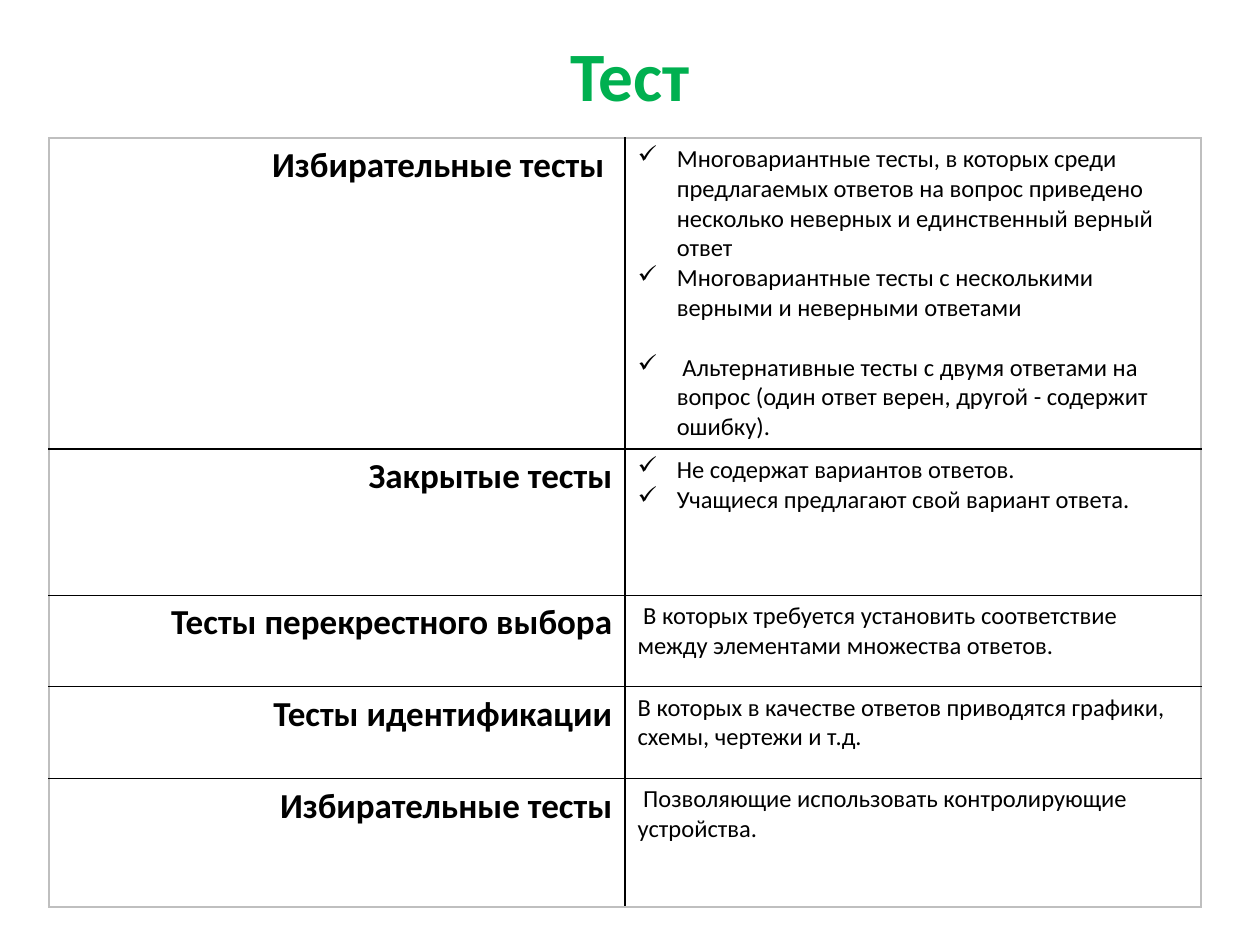
from lxml import etree
from pptx import Presentation
from pptx import util as u
from pptx.dml.color import RGBColor
from pptx.enum import text
from pptx.oxml import ns

GREEN = RGBColor(0x00, 0xB0, 0x50)
BLACK = RGBColor(0, 0, 0)
GREY = RGBColor(0xBF, 0xBF, 0xBF)
FONT = "Calibri"


def style(par, size, bold, color):
    par.font.name = FONT
    par.font.size = u.Pt(size)
    par.font.bold = bold
    par.font.color.rgb = color


def edge(cell, side, pos, color):
    line = etree.Element(ns.qn("a:ln" + side), w=str(u.Pt(1)))
    fill = etree.SubElement(line, ns.qn("a:solidFill"))
    etree.SubElement(fill, ns.qn("a:srgbClr"), val=str(color))
    cell._tc.get_or_add_tcPr().insert(pos, line)


prs = Presentation()
prs.slide_width, prs.slide_height = u.Cm(25.4), u.Cm(19.05)
slide = prs.slides.add_slide(prs.slide_layouts[6])

# Title
box = slide.shapes.add_textbox(u.Cm(1.27), u.Cm(0.65), u.Cm(22.86), u.Cm(1.9))
frame = box.text_frame
frame.word_wrap = True
frame.margin_top = frame.margin_bottom = 0
par = frame.paragraphs[0]
par.text = "Тест"
par.alignment = text.PP_ALIGN.CENTER
style(par, 39.6, True, GREEN)

# Test kinds: name, row height, ticked or plain, lines
rows = [
    ("Избирательные тесты ", 6.27, True, [
        "Многовариантные тесты, в которых среди предлагаемых ответов на вопрос "
        "приведено несколько неверных и единственный верный ответ",
        "Многовариантные тесты с несколькими верными и неверными ответами",
        " Альтернативные тесты с двумя ответами на вопрос "
        "(один ответ верен, другой - содержит ошибку)."]),
    ("Закрытые тесты", 2.95, True, [
        "Не содержат вариантов ответов.",
        "Учащиеся предлагают свой вариант ответа."]),
    ("Тесты перекрестного выбора", 1.84, False, [
        " В которых требуется установить соответствие между элементами "
        "множества ответов."]),
    ("Тесты идентификации", 1.85, False, [
        "В которых в качестве ответов приводятся графики, схемы, чертежи и т.д."]),
    ("Избирательные тесты", 2.59, False, [
        " Позволяющие использовать контролирующие устройства."]),
]

# Table
high = sum(row[1] for row in rows)
grid = slide.shapes.add_table(
    len(rows), 2, u.Cm(0.99), u.Cm(2.78), u.Cm(23.22), u.Cm(high)).table
grid.first_row = grid.horz_banding = False
for col in grid.columns:
    col.width = u.Cm(11.61)

for r, (name, size, ticked, lines) in enumerate(rows):
    grid.rows[r].height = u.Cm(size)
    left, right = grid.cell(r, 0), grid.cell(r, 1)

    # Name of the kind
    par = left.text_frame.paragraphs[0]
    par.text = name
    par.alignment = text.PP_ALIGN.RIGHT
    style(par, 20, True, BLACK)

    # Description
    frame = right.text_frame
    for i, line in enumerate(lines):
        par = frame.paragraphs[0] if i == 0 else frame.add_paragraph()
        par.text = line
        if ticked:
            props = par._p.get_or_add_pPr()
            props.set("marL", str(u.Cm(0.79)))
            props.set("indent", str(u.Cm(-0.79)))
            etree.SubElement(props, ns.qn("a:buFont"), typeface="Wingdings")
            etree.SubElement(props, ns.qn("a:buChar"), char="ü")
        if i == 2:
            par.space_before = u.Pt(17)
        style(par, 14, False, BLACK)

    # Grey outer frame, black inner lines
    for c, cell in enumerate((left, right)):
        cell.fill.background()
        outer = {"L": c == 0, "R": c == 1, "T": r == 0, "B": r == len(rows) - 1}
        for pos, (side, out) in enumerate(outer.items()):
            edge(cell, side, pos, GREY if out else BLACK)

prs.save("out.pptx")
